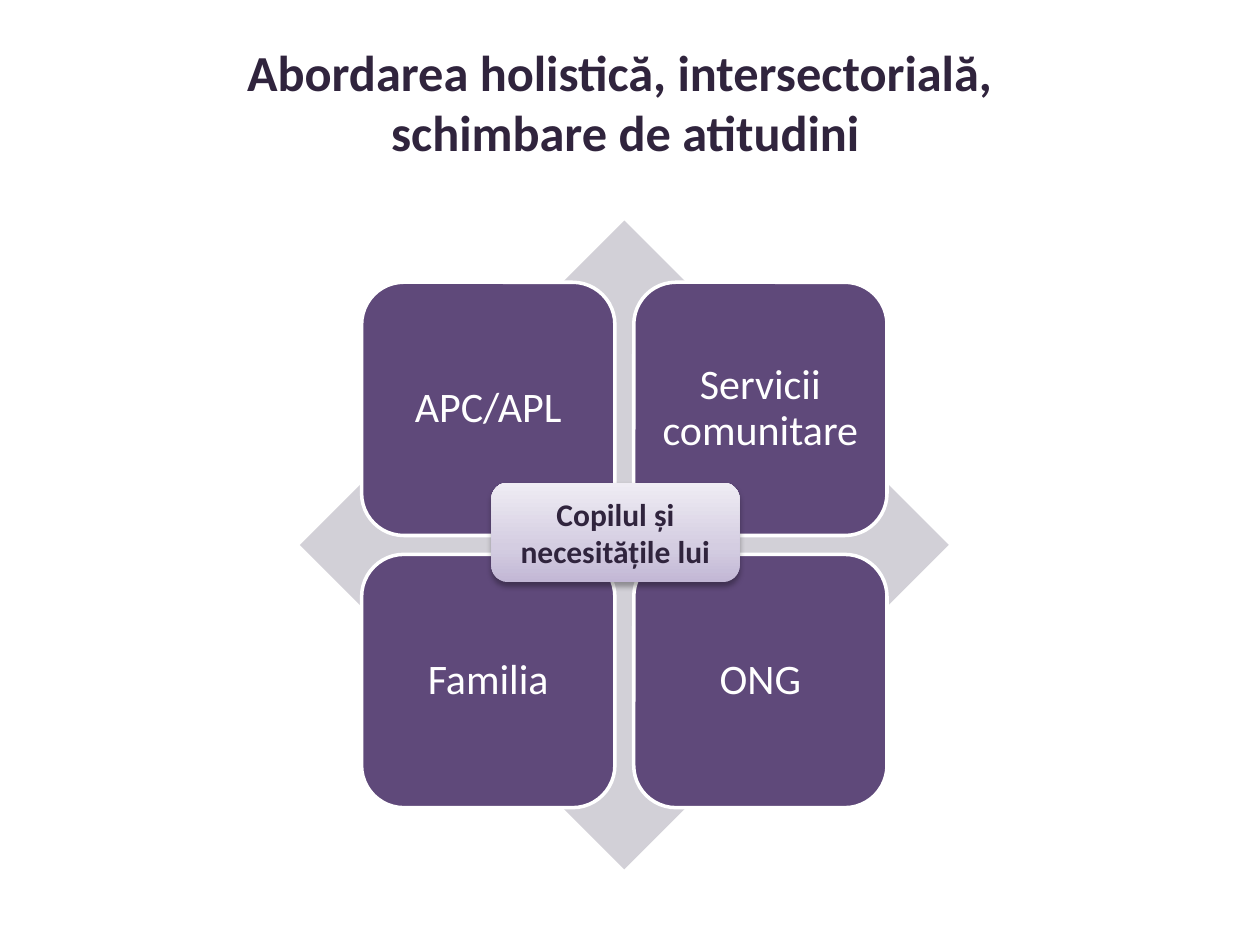
from dataclasses import dataclass

from lxml import etree
from pptx import Presentation
from pptx.dml.color import RGBColor
from pptx.enum import shapes, text
from pptx.oxml import parse_xml
from pptx.oxml.ns import nsdecls, qn
from pptx.util import Inches, Pt


@dataclass(frozen=True)
class Theme:
    font: str = "Calibri"
    ink: str = "30243D"
    white: str = "FFFFFF"
    tile: str = "5F497A"
    diamond: str = "D2D0D7"
    badge: tuple = ((0, "C2B7D5"), (35, "D4CDE1"), (100, "EFECF4"))
    title_size: float = 28.8
    tile_size: float = 24
    badge_size: float = 18


theme = Theme()


def add_block(kind, left, top, width, height, fill=None):
    """Add a preset shape with no shadow and no outline."""
    sp = s.shapes.add_shape(kind, Inches(left), Inches(top), Inches(width), Inches(height))
    sp.shadow.inherit = False
    sp.line.fill.background()
    if fill:
        sp.fill.solid()
        sp.fill.fore_color.rgb = RGBColor.from_string(fill)
    return sp


def write(sp, words, size, color, bold=False):
    """Fill a shape with one centred paragraph."""
    tf = sp.text_frame
    tf.word_wrap = True
    tf.vertical_anchor = text.MSO_ANCHOR.MIDDLE
    p = tf.paragraphs[0]
    p.text = words
    p.alignment = text.PP_ALIGN.CENTER
    p.font.name = theme.font
    p.font.size = Pt(size)
    p.font.bold = bold
    p.font.color.rgb = RGBColor.from_string(color)
    return tf


prs = Presentation()
prs.slide_width, prs.slide_height = Inches(10), Inches(7.5)
s = prs.slides.add_slide(prs.slide_layouts[6])

title = s.shapes.add_textbox(Inches(0.2), Inches(0.3), Inches(9.53), Inches(1.01))
write(title, "Abordarea holistică, intersectorială, \vschimbare de atitudini",
      theme.title_size, theme.ink, bold=True)

add_block(shapes.MSO_SHAPE.DIAMOND, 2.38, 1.75, 5.15, 5.15, theme.diamond)

# Two-by-two grid of partners
tile_side, tile_step = 2.01, 2.16
for i, partner in enumerate(("APC/APL", "Servicii comunitare", "Familia", "ONG")):
    row, col = divmod(i, 2)
    tile = add_block(shapes.MSO_SHAPE.ROUNDED_RECTANGLE, 2.87 + col * tile_step,
                     2.24 + row * tile_step, tile_side, tile_side, theme.tile)
    tile.line.color.rgb = RGBColor.from_string(theme.white)
    tile.line.width = Pt(2)
    tf = write(tile, partner, theme.tile_size, theme.white)
    tf.margin_left = tf.margin_right = tf.margin_top = tf.margin_bottom = Inches(0.1)
    tf.paragraphs[0].line_spacing = 0.9

# Central badge: three-stop gradient, dark at the bottom, with a soft shadow
badge = add_block(shapes.MSO_SHAPE.ROUNDED_RECTANGLE, 3.9, 3.83, 1.97, 0.79)
badge.fill.gradient()
badge.fill.gradient_angle = 90
stops = badge._element.spPr.find(".//" + qn("a:gsLst"))
for stop in list(stops):
    stops.remove(stop)
for percent, color in theme.badge:
    stop = etree.SubElement(stops, qn("a:gs"), pos=str(percent * 1000))
    etree.SubElement(stop, qn("a:srgbClr"), val=color)
badge._element.spPr.find(qn("a:effectLst")).append(parse_xml(
    f'<a:outerShdw {nsdecls("a")} blurRad="{Pt(3.5)}" dist="{Pt(2.2)}" dir="5400000" '
    'rotWithShape="0"><a:srgbClr val="000000"><a:alpha val="32000"/></a:srgbClr></a:outerShdw>'))
write(badge, "Copilul și necesitățile lui", theme.badge_size, theme.ink, bold=True)

prs.save("out.pptx")
